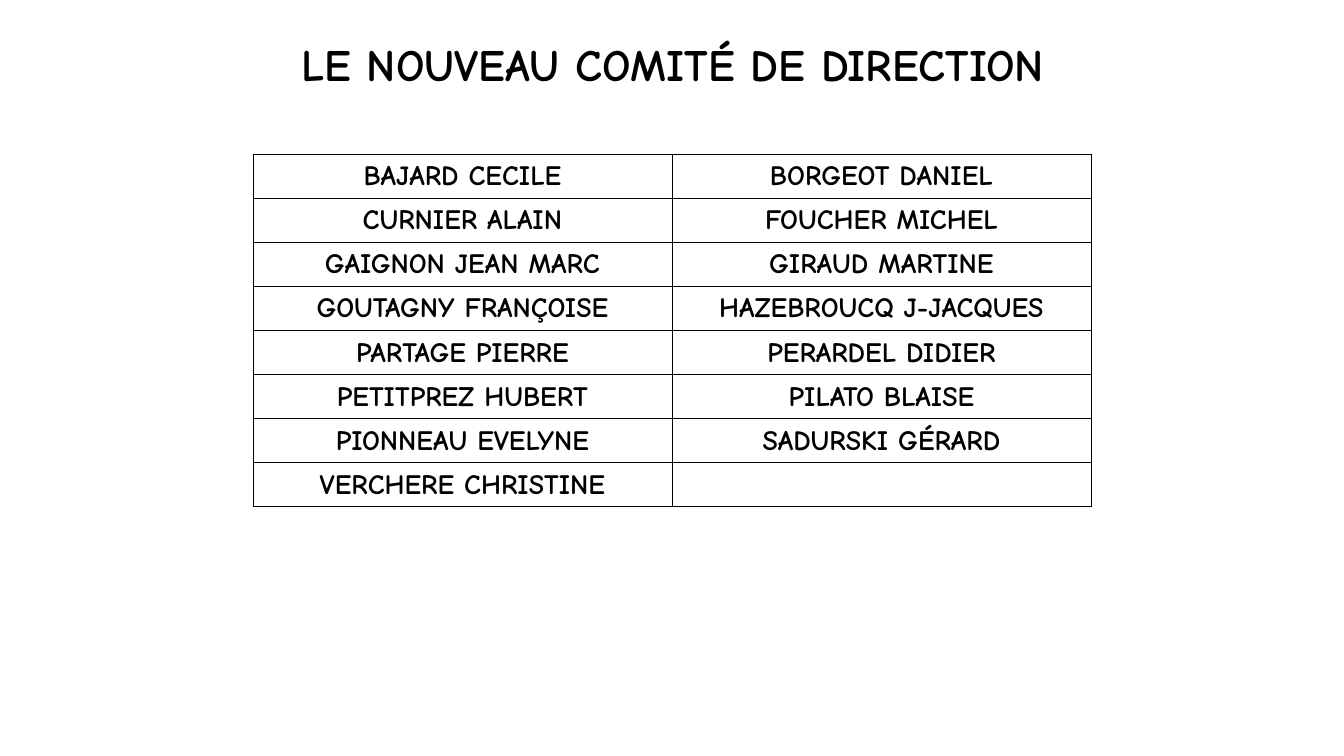
import pptx
import pptx.dml.color
import pptx.enum.text
import pptx.oxml
import pptx.oxml.ns
import pptx.util

PX = 914400 / 100.8
BLACK = pptx.dml.color.RGBColor(0, 0, 0)
WHITE = pptx.dml.color.RGBColor(255, 255, 255)
FONT = "Comic Neue"
MEMBERS = [
    ("BAJARD CECILE", "BORGEOT DANIEL"),
    ("CURNIER ALAIN", "FOUCHER MICHEL"),
    ("GAIGNON JEAN MARC", "GIRAUD MARTINE"),
    ("GOUTAGNY FRANÇOISE", "HAZEBROUCQ J-JACQUES"),
    ("PARTAGE PIERRE", "PERARDEL DIDIER"),
    ("PETITPREZ HUBERT", "PILATO BLAISE"),
    ("PIONNEAU EVELYNE", "SADURSKI GÉRARD"),
    ("VERCHERE CHRISTINE", ""),
]


def px(n):
    """Turn a length in px into EMU."""
    return pptx.util.Emu(round(n * PX))


def format_text(tf, size):
    """Centre the text of a frame and set its bold black font."""
    for p in tf.paragraphs:
        p.alignment = pptx.enum.text.PP_ALIGN.CENTER
        for r in p.runs:
            r.font.name = FONT
            r.font.size = pptx.util.Pt(size)
            r.font.bold = True
            r.font.color.rgb = BLACK


def add_borders(cell, width):
    """Draw a solid black line on the four sides of a cell."""
    tcPr = cell._tc.get_or_add_tcPr()
    for i, side in enumerate(("lnL", "lnR", "lnT", "lnB")):
        ln = pptx.oxml.parse_xml(
            f'<a:{side} {pptx.oxml.ns.nsdecls("a")} w="{pptx.util.Pt(width)}">'
            f'<a:solidFill><a:srgbClr val="{BLACK}"/></a:solidFill></a:{side}>'
        )
        tcPr.insert(i, ln)


def add_title(slide, text, x, y, w, h):
    """Place the slide title in the given box."""
    sp = slide.shapes.title
    sp.left, sp.top, sp.width, sp.height = px(x), px(y), px(w), px(h)
    tf = sp.text_frame
    tf.text = text
    tf.word_wrap = True
    tf.auto_size = pptx.enum.text.MSO_AUTO_SIZE.NONE
    tf.vertical_anchor = pptx.enum.text.MSO_ANCHOR.MIDDLE
    format_text(tf, 32)


def add_members(slide, members, x, y, w, h):
    """Fill the given box with the table of committee members."""
    rows, cols = len(members), len(members[0])
    table = slide.shapes.add_table(rows, cols, px(x), px(y), px(w), px(h)).table
    table.first_row = False
    table.horz_banding = False
    for row, names in zip(table.rows, members):
        for cell, name in zip(row.cells, names):
            cell.text_frame.text = name
            format_text(cell.text_frame, 20)
            cell.vertical_anchor = pptx.enum.text.MSO_ANCHOR.MIDDLE
            cell.margin_left = cell.margin_right = cell.margin_top = px(1)
            cell.margin_bottom = 0
            cell.fill.solid()
            cell.fill.fore_color.rgb = WHITE
            add_borders(cell, 0.5)


def main():
    """Build the slide and save it."""
    prs = pptx.Presentation()
    prs.slide_width, prs.slide_height = px(1344), px(756)
    slide = prs.slides.add_slide(prs.slide_layouts[5])
    add_title(slide, "LE NOUVEAU COMITÉ DE DIRECTION", 100, 31, 1146, 65)
    add_members(slide, MEMBERS, 253, 154, 838, 353)
    prs.save("out.pptx")


if __name__ == "__main__":
    main()
